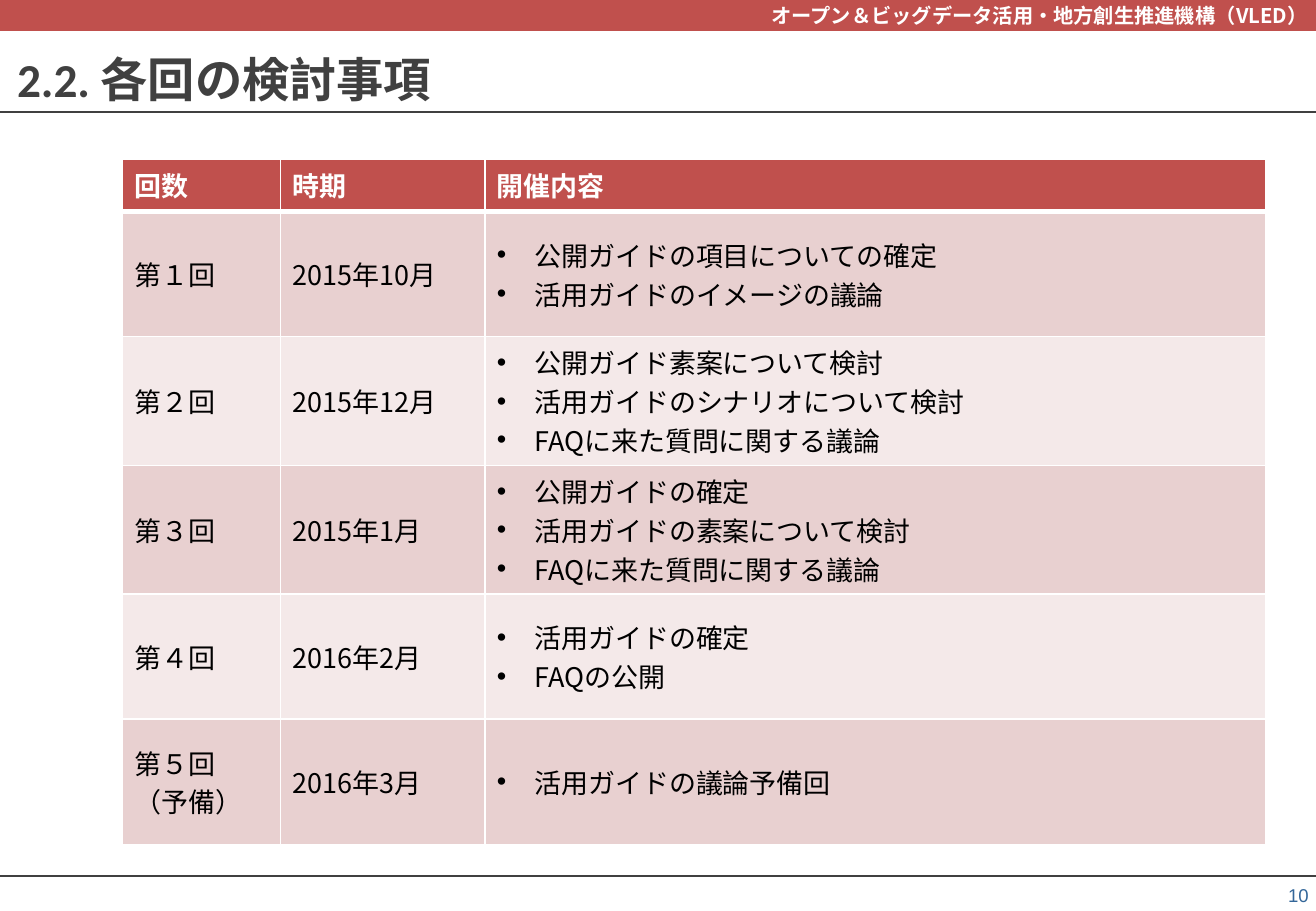
from lxml import etree
from pptx import Presentation
from pptx import util as u
from pptx.dml.color import RGBColor
from pptx.enum import shapes, text
from pptx.oxml import ns

SCALE = 9144
WIDTH, HEIGHT = 1083, 750
COLOURS = {"red": "C0504D", "dark": "404040", "blue": "336699", "white": "FFFFFF",
           "black": "000000", "odd": "E8D0D0", "even": "F4E9E9"}
GOTHIC = "Noto Sans CJK JP"
MEETINGS = [
    (["第１回"], "2015年10月", ["公開ガイドの項目についての確定", "活用ガイドのイメージの議論"]),
    (["第２回"], "2015年12月", ["公開ガイド素案について検討", "活用ガイドのシナリオについて検討",
                            "FAQに来た質問に関する議論"]),
    (["第３回"], "2015年1月", ["公開ガイドの確定", "活用ガイドの素案について検討",
                           "FAQに来た質問に関する議論"]),
    (["第４回"], "2016年2月", ["活用ガイドの確定", "FAQの公開"]),
    (["第５回", "（予備）"], "2016年3月", ["活用ガイドの議論予備回"]),
]


def px(length):
    """Turn whole px into EMU."""
    return u.Emu(length * SCALE)


def rgb(name):
    """Look up a named colour."""
    return RGBColor.from_string(COLOURS[name])


class SlideBuilder:
    """Hold the style and the current slide."""

    def __init__(self, deck):
        """Start a title-only slide."""
        self.page = deck.slides.add_slide(deck.slide_layouts[5])

    def add_lines(self, frame, lines, size, colour, bold=False, font=GOTHIC,
                  align=text.PP_ALIGN.LEFT, bullet=False):
        """Fill a text frame with one paragraph per line."""
        for index, line in enumerate(lines):
            para = frame.paragraphs[0] if index == 0 else frame.add_paragraph()
            para.alignment = align
            if bullet:
                props = para._p.get_or_add_pPr()
                props.set("marL", str(px(31)))
                props.set("indent", str(-px(31)))
                etree.SubElement(props, ns.qn("a:buFont")).set("typeface", "Arial")
                etree.SubElement(props, ns.qn("a:buChar")).set("char", "•")
            span = para.add_run()
            span.text = line
            span.font.size = u.Pt(size)
            span.font.bold = bold
            span.font.name = font
            span.font.color.rgb = rgb(colour)
            east = etree.SubElement(span._r.get_or_add_rPr(), ns.qn("a:ea"))
            east.set("typeface", GOTHIC)

    def frame(self, box, anchor, side=7, edge=4):
        """Set the wrapping, anchor and insets of a text box."""
        frame = box.text_frame
        frame.word_wrap = True
        frame.auto_size = text.MSO_AUTO_SIZE.NONE
        frame.vertical_anchor = anchor
        frame.margin_left = frame.margin_right = px(side)
        frame.margin_top = frame.margin_bottom = px(edge)
        return frame

    def banner(self, words, height):
        """Draw the band across the top."""
        box = self.page.shapes.add_shape(shapes.MSO_SHAPE.RECTANGLE, 0, 0, px(WIDTH), px(height))
        box.shadow.inherit = False
        box.fill.solid()
        box.fill.fore_color.rgb = rgb("red")
        box.line.color.rgb = rgb("red")
        box.line.width = u.Pt(0.75)
        self.add_lines(self.frame(box, text.MSO_ANCHOR.MIDDLE), [words], 12, "white", True,
                       align=text.PP_ALIGN.RIGHT)

    def rule(self, top):
        """Draw a line across the slide."""
        line = self.page.shapes.add_connector(shapes.MSO_CONNECTOR.STRAIGHT,
                                              0, px(top), px(WIDTH), px(top))
        line.line.color.rgb = rgb("dark")
        line.line.width = u.Pt(1)
        etree.SubElement(line._element.spPr, ns.qn("a:effectLst"))

    def title(self, words, left, top, width, height):
        """Place and fill the title."""
        box = self.page.shapes.title
        box.left, box.top, box.width, box.height = map(px, (left, top, width, height))
        self.add_lines(self.frame(box, text.MSO_ANCHOR.MIDDLE, 0, 0), [words], 28, "dark", True,
                       "Calibri")

    def number(self, words, left, top, width, height):
        """Add the page number."""
        box = self.page.shapes.add_textbox(*map(px, (left, top, width, height)))
        self.add_lines(self.frame(box, text.MSO_ANCHOR.BOTTOM), [words], 11, "blue",
                       font="Arial", align=text.PP_ALIGN.RIGHT)

    def cell(self, cell, lines, fill, colour="black", bold=False, bullet=False, top=1, bottom=1):
        """Border and fill one table cell and add its text."""
        props = cell._tc.get_or_add_tcPr()
        for side, points in (("L", 1), ("R", 1), ("T", top), ("B", bottom)):
            border = etree.SubElement(props, ns.qn("a:ln" + side), w=str(u.Pt(points)))
            solid = etree.SubElement(border, ns.qn("a:solidFill"))
            etree.SubElement(solid, ns.qn("a:srgbClr"), val=COLOURS["white"])
        cell.fill.solid()
        cell.fill.fore_color.rgb = rgb(fill)
        cell.vertical_anchor = text.MSO_ANCHOR.MIDDLE
        self.add_lines(cell.text_frame, lines, 16, colour, bold, bullet=bullet)

    def schedule(self, headings, meetings, left, top, widths, head, height):
        """Draw the table of meetings."""
        table = self.page.shapes.add_table(
            len(meetings) + 1, len(widths), px(left), px(top), px(sum(widths)),
            px(head + height * len(meetings))).table
        table.horz_banding = False
        for column, width in zip(table.columns, widths):
            column.width = px(width)
        for index, row in enumerate(table.rows):
            row.height = px(height if index else head)
        for column, heading in enumerate(headings):
            self.cell(table.cell(0, column), [heading], "red", "white", True, bottom=3)
        for row, (name, month, topics) in enumerate(meetings, 1):
            fill = "odd" if row % 2 else "even"
            for column, lines in enumerate((name, [month], topics)):
                self.cell(table.cell(row, column), lines, fill, bullet=column == 2,
                          top=3 if row == 1 else 1)


def main():
    """Build and save the deck."""
    deck = Presentation()
    deck.slide_width, deck.slide_height = px(WIDTH), px(HEIGHT)
    slide = SlideBuilder(deck)
    slide.banner("オープン＆ビッグデータ活用・地方創生推進機構（VLED）", 25)
    for top in (721, 92):
        slide.rule(top)
    slide.number("10", 1039, 722, 45, 28)
    slide.title("2.2. 各回の検討事項", 14, 33, 1027, 64)
    slide.schedule(("回数", "時期", "開催内容"), MEETINGS, 101, 131, (130, 168, 643), 43, 103)
    deck.save("out.pptx")


if __name__ == "__main__":
    main()
